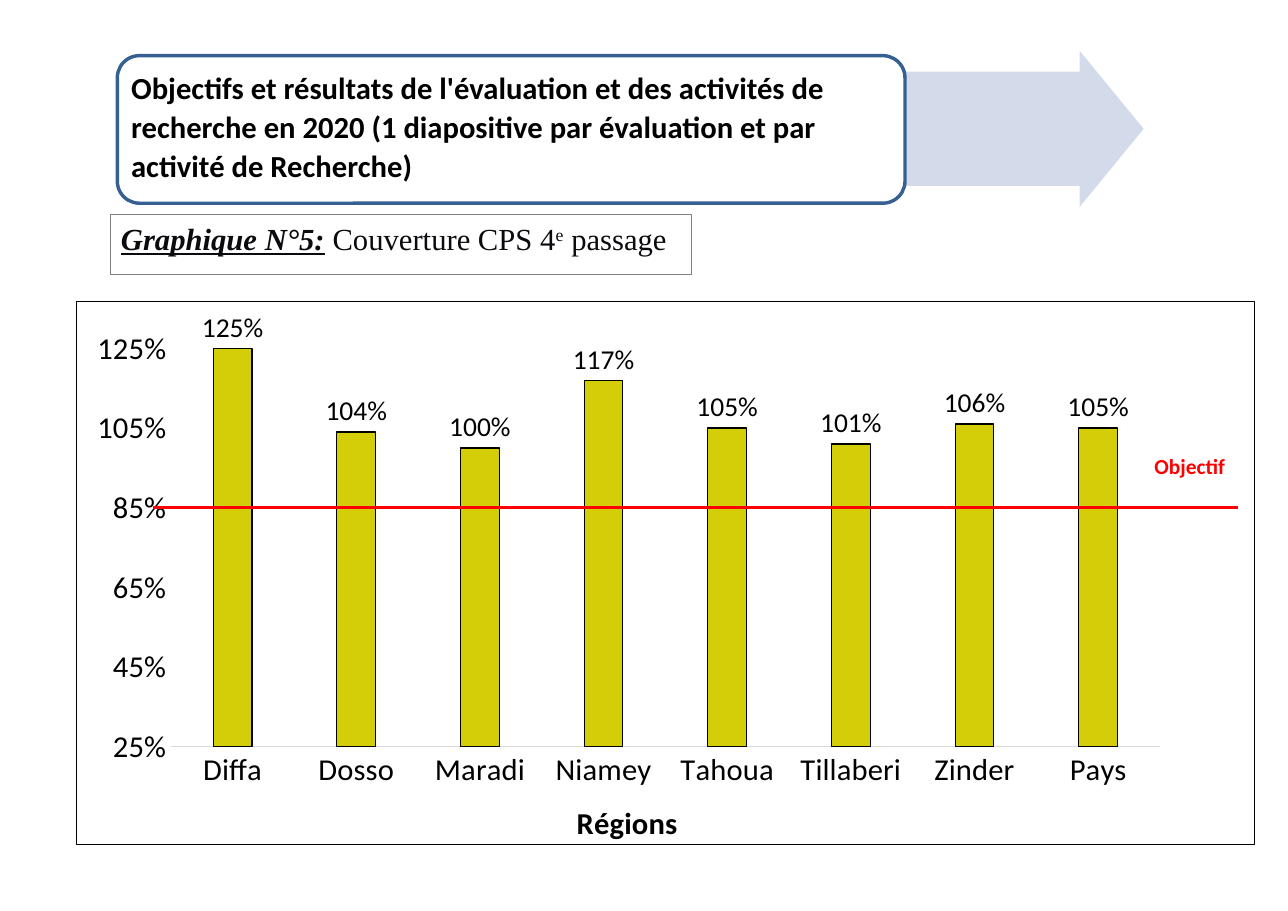
import dataclasses

import lxml.etree
import pptx
import pptx.chart.data
import pptx.dml.color
import pptx.enum.chart
import pptx.enum.shapes
import pptx.enum.text
import pptx.oxml
import pptx.oxml.ns
import pptx.util

qn = pptx.oxml.ns.qn
Pt = pptx.util.Pt
SHAPE = pptx.enum.shapes.MSO_SHAPE


def rgb(value):
    return pptx.dml.color.RGBColor.from_string(value)


@dataclasses.dataclass(frozen=True)
class Theme:
    sans: str = "Calibri"
    serif: str = "Times New Roman"
    text: str = "000000"
    caption: str = "0B0B0F"
    paper: str = "FFFFFF"
    arrow: str = "CFD8E8"
    panel: str = "366091"
    frame: str = "808080"
    axis: str = "D9D9D9"
    bar: str = "D3CE08"
    target: str = "FF0000"
    body: int = 20
    value: int = 18
    note: int = 14
    thin: float = 0.75
    thick: float = 2.25


class Deck:
    """Draws styled elements on one slide, placed in percent of its size."""

    def __init__(self, theme, width, height):
        self.theme = theme
        self.prs = pptx.Presentation()
        self.prs.slide_width = pptx.util.Inches(width)
        self.prs.slide_height = pptx.util.Inches(height)
        self.s = self.prs.slides.add_slide(self.prs.slide_layouts[6])

    def place(self, *shares):
        sizes = (self.prs.slide_width, self.prs.slide_height) * 2
        return [round(size * share / 100) for size, share in zip(sizes, shares)]

    def stroke(self, line, color, width):
        line.color.rgb = rgb(color)
        line.width = Pt(width)

    def font(self, font, size, color=None, bold=False, name=None):
        font.size = Pt(size)
        font.color.rgb = rgb(color or self.theme.text)
        font.bold = bold
        font.name = name or self.theme.sans

    def shape(self, kind, at, fill, line=None, adjust=(), alpha=None):
        sp = self.s.shapes.add_shape(kind, *self.place(*at))
        sp.shadow.inherit = False
        for i, value in enumerate(adjust):
            sp.adjustments[i] = value
        sp.fill.solid()
        sp.fill.fore_color.rgb = rgb(fill)
        if alpha:
            color = sp.element.spPr.find(".//" + qn("a:srgbClr"))
            lxml.etree.SubElement(color, qn("a:alpha")).set("val", str(alpha * 1000))
        if line:
            self.stroke(sp.line, line, self.theme.thick)
        else:
            sp.line.fill.background()

    def text(self, at, runs, size, color, name=None, line=None, insets=None,
             spacing=None, before=0, after=0):
        sp = self.s.shapes.add_textbox(*self.place(*at))
        tf = sp.text_frame
        tf.word_wrap = True
        if line:
            self.stroke(sp.line, line, self.theme.thin)
        if insets:
            tf.margin_left, tf.margin_top, tf.margin_right, tf.margin_bottom = map(
                pptx.util.Inches, insets)
        p = tf.paragraphs[0]
        p.line_spacing = spacing
        p.space_before, p.space_after = Pt(before), Pt(after)
        for text, marks in runs:
            r = p.add_run()
            r.text = text
            self.font(r.font, size, color, "b" in marks, name)
            r.font.italic = "i" in marks
            r.font.underline = "u" in marks
            if "^" in marks:
                r._r.get_or_add_rPr().set("baseline", "30000")

    def line(self, start, end, color):
        sp = self.s.shapes.add_connector(
            pptx.enum.shapes.MSO_CONNECTOR.STRAIGHT, *self.place(*start, *end))
        self.stroke(sp.line, color, self.theme.thick)
        lxml.etree.SubElement(sp.element.spPr, qn("a:effectLst"))

    def layout(self, parent, inner=False, **shares):
        layout = parent.find(qn("c:layout"))
        if layout is None:
            layout = pptx.oxml.parse_xml(
                f'<c:layout {pptx.oxml.ns.nsdecls("c")}/>')
            parent.insert(0, layout)
        for child in list(layout):
            layout.remove(child)
        manual = lxml.etree.SubElement(layout, qn("c:manualLayout"))
        settings = {"layoutTarget": "inner"} if inner else {}
        settings |= {"xMode": "edge", "yMode": "edge"} | shares
        for tag, value in settings.items():
            lxml.etree.SubElement(manual, qn("c:" + tag)).set("val", str(value))

    def columns(self, at, values, title):
        t = self.theme
        data = pptx.chart.data.CategoryChartData(number_format="0%")
        data.categories = list(values)
        data.add_series("Couverture", list(values.values()))
        chart = self.s.shapes.add_chart(
            pptx.enum.chart.XL_CHART_TYPE.COLUMN_CLUSTERED, *self.place(*at), data).chart
        chart.has_legend = chart.has_title = False
        self.font(chart.font, t.body)
        border = pptx.oxml.parse_xml(
            f'<c:spPr {pptx.oxml.ns.nsdecls("c", "a")}><a:noFill/>'
            f'<a:ln w="{Pt(t.thin)}"><a:solidFill><a:srgbClr val="{t.text}"/>'
            '</a:solidFill></a:ln></c:spPr>')
        area = chart.element.find(qn("c:chart"))
        area.addnext(border)
        self.layout(area.find(qn("c:plotArea")), True, x=0.08, y=0.05, w=0.84, h=0.77)

        plot = chart.plots[0]
        plot.gap_width = 219
        plot.vary_by_categories = False
        series = plot.series[0]
        series.format.fill.solid()
        series.format.fill.fore_color.rgb = rgb(t.bar)
        self.stroke(series.format.line, t.text, t.thin)
        labels = series.data_labels
        labels.show_value = True
        labels.number_format, labels.number_format_is_linked = "0%", False
        labels.position = pptx.enum.chart.XL_LABEL_POSITION.OUTSIDE_END
        self.font(labels.font, t.value)

        cat, val = chart.category_axis, chart.value_axis
        for axis in (cat, val):
            axis.has_major_gridlines = False
            axis.major_tick_mark = pptx.enum.chart.XL_TICK_MARK.NONE
            axis.minor_tick_mark = pptx.enum.chart.XL_TICK_MARK.NONE
            self.font(axis.tick_labels.font, t.body)
        self.stroke(cat.format.line, t.axis, t.thin)
        val.format.line.fill.background()
        val.minimum_scale, val.maximum_scale, val.major_unit = 0.25, 1.3, 0.2
        val.tick_labels.number_format = "0%"
        val.tick_labels.number_format_is_linked = False
        r = cat.axis_title.text_frame.paragraphs[0].add_run()
        r.text = title
        self.font(r.font, t.body, bold=True)
        self.layout(cat.axis_title.element, x=0.42, y=0.91)


def main():
    t = Theme()
    deck = Deck(t, 11.69, 8.27)
    deck.shape(SHAPE.RIGHT_ARROW, (70.15, 5.56, 18.65, 17.17), t.arrow,
               adjust=(0.73, 0.41), alpha=90)
    deck.shape(SHAPE.ROUNDED_RECTANGLE, (9.11, 6.11, 61.16, 16.2), t.paper,
               line=t.panel, adjust=(0.15,))
    deck.text((10.18, 6.53, 59.88, 13.54),
              [("Objectifs et résultats de l'évaluation et des activités de recherche "
                "en 2020 (1 diapositive par évaluation et par activité de Recherche)", "b")],
              t.body, t.text, insets=(0, 0.06, 0, 0), spacing=1.07, after=8)
    deck.text((8.55, 23.58, 45.17, 6.53),
              [("Graphique N°5:", "biu"), (" Couverture CPS 4", ""), ("e", "^"),
               (" passage", "")],
              t.body, t.caption, name=t.serif, line=t.frame, before=4)
    coverage = {"Diffa": 1.25, "Dosso": 1.04, "Maradi": 1, "Niamey": 1.17,
                "Tahoua": 1.05, "Tillaberi": 1.01, "Zinder": 1.06, "Pays": 1.05}
    deck.columns((5.9, 33.01, 91.53, 60.46), coverage, "Régions")
    deck.line((11.89, 55.68), (96.15, 55.68), t.target)
    deck.text((88.79, 49.09, 9.24, 4.11), [("Objectif", "b")], t.note, t.target)
    deck.prs.save("out.pptx")


if __name__ == "__main__":
    main()
